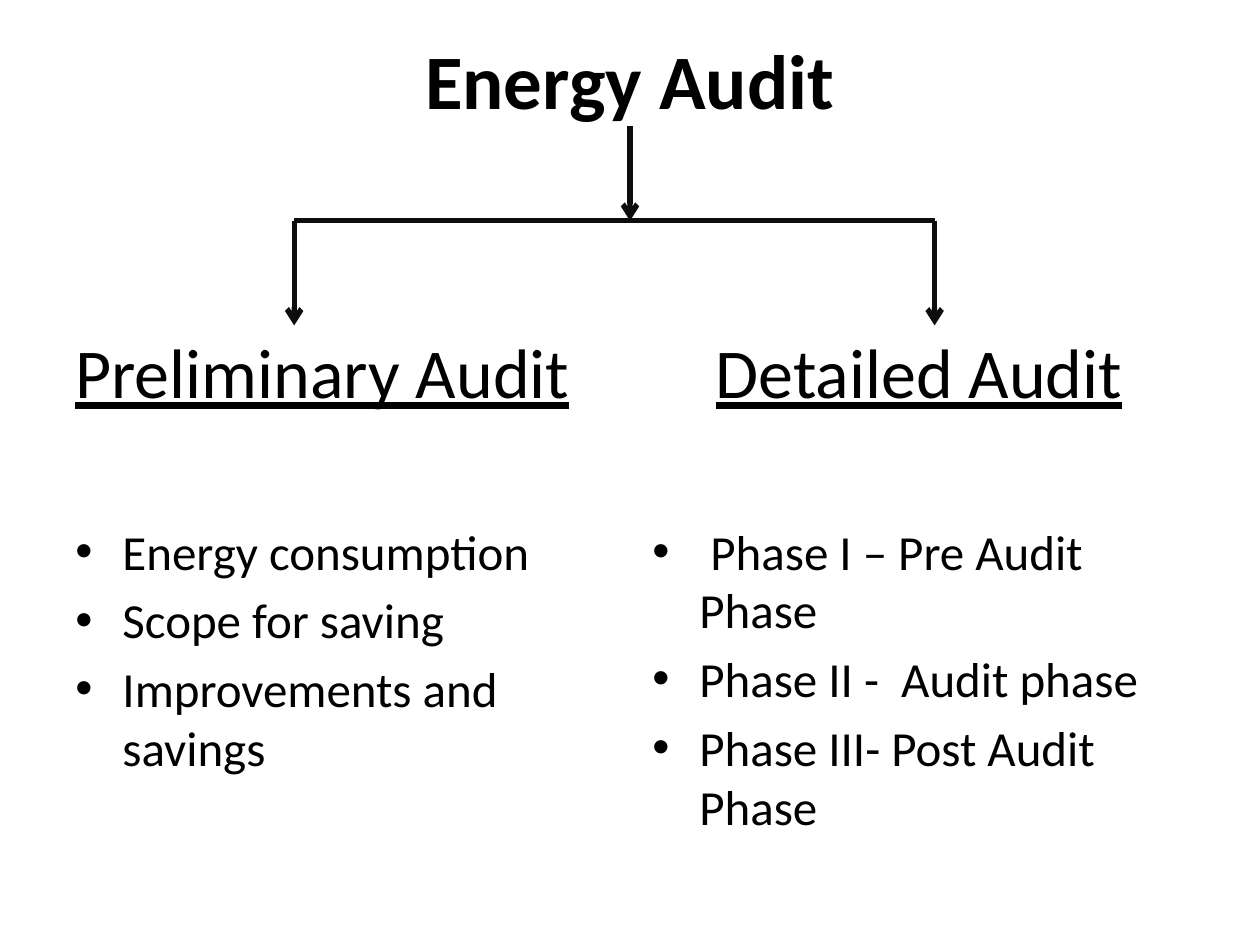
from lxml import etree
from pptx import Presentation
from pptx.dml.color import RGBColor
from pptx.enum import shapes, text
from pptx.oxml import ns
from pptx.util import Cm, Pt

BLACK = RGBColor(0, 0, 0)
INK = RGBColor(0x0D, 0x0D, 0x0D)


def write(para, words, size=28, bold=False, line=False, mark=False,
          before=0, left=0, first=0, align=text.PP_ALIGN.LEFT):
    props = para._p.get_or_add_pPr()
    props.set("marL", str(Cm(left)))
    props.set("indent", str(Cm(first)))
    if mark:
        font = etree.SubElement(props, ns.qn("a:buFont"))
        font.set("typeface", "Arial")
        etree.SubElement(props, ns.qn("a:buChar")).set("char", "•")
    para.alignment = align
    para.space_before = Pt(before)
    run = para.add_run()
    run.text = words
    run.font.name = "Calibri"
    run.font.size = Pt(size)
    run.font.bold = bold
    run.font.underline = line
    run.font.color.rgb = BLACK


deck = Presentation()
deck.slide_width, deck.slide_height = Cm(25.4), Cm(19.05)
slide = deck.slides.add_slide(deck.slide_layouts[5])

# Title
title = slide.shapes.title
title.left, title.top, title.width, title.height = Cm(1.27), Cm(0), Cm(22.86), Cm(3.18)
title.text_frame.vertical_anchor = text.MSO_ANCHOR.MIDDLE
write(title.text_frame.paragraphs[0], "Energy Audit", size=44, bold=True,
      align=text.PP_ALIGN.CENTER)

# Two columns: left edge, heading, heading indent, bullets
cols = [
    (1.27, "Preliminary Audit", 0,
     ["Energy consumption", "Scope for saving", "Improvements and savings"]),
    (12.9, "Detailed Audit", 1.28,
     [" Phase I – Pre Audit Phase", "Phase II -  Audit phase",
      "Phase III- Post Audit Phase"]),
]
for left, head, shift, items in cols:
    box = slide.shapes.add_textbox(Cm(left), Cm(6.5), Cm(11.23), Cm(10.5))
    frame = box.text_frame
    frame.word_wrap = True
    write(frame.paragraphs[0], head, size=40, line=True, left=shift)
    for i, item in enumerate(items):
        write(frame.add_paragraph(), item, mark=True, left=0.95, first=-0.95,
              before=5.6 if i else 62)

# Branching lines: start, end, arrowhead
west, mid, east = 5.93, 12.7, 18.84
top, bar, low = 2.54, 4.45, 6.56
lines = [
    (west, bar, west, low, True),
    (east, bar, east, low, True),
    (west, bar, east, bar, False),
    (mid, top, mid, bar, True),
]
for x1, y1, x2, y2, head in lines:
    link = slide.shapes.add_connector(shapes.MSO_CONNECTOR.STRAIGHT,
                                      Cm(x1), Cm(y1), Cm(x2), Cm(y2))
    link.line.color.rgb = INK
    link.line.width = Pt(3)
    if head:
        tip = etree.SubElement(link.line._get_or_add_ln(), ns.qn("a:tailEnd"))
        tip.set("type", "arrow")
    etree.SubElement(link._element.spPr, ns.qn("a:effectLst"))

deck.save("out.pptx")
